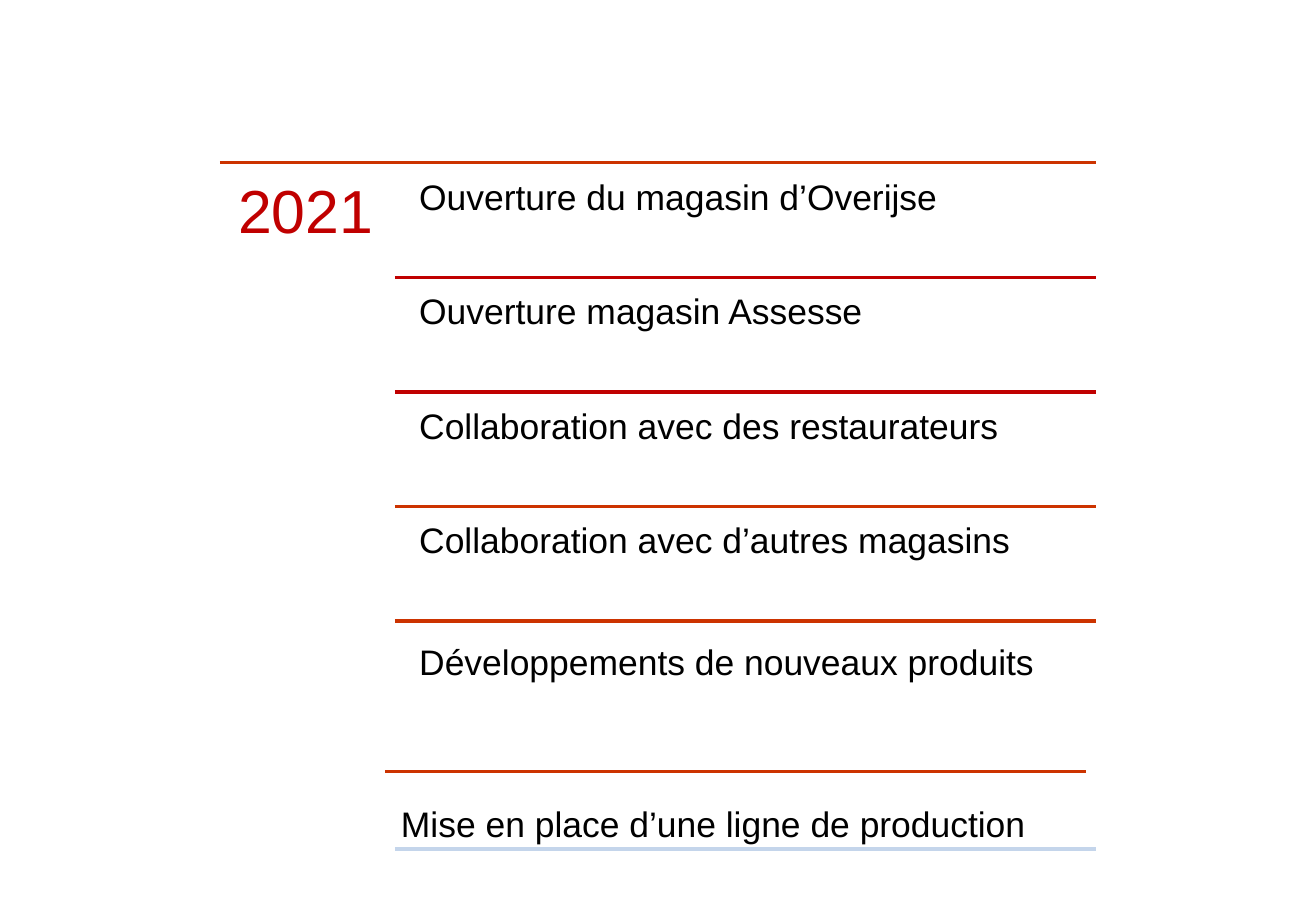
from dataclasses import dataclass

from pptx import Presentation
from pptx.dml.color import RGBColor
from pptx.enum.shapes import MSO_CONNECTOR as Connector
from pptx.enum.text import MSO_ANCHOR as Anchor, MSO_AUTO_SIZE as AutoSize
from pptx.oxml.ns import qn
from pptx.util import Inches, Pt
from lxml.etree import SubElement


@dataclass(frozen=True)
class Theme:
    font: str = "Arial"
    orange: str = "CC3300"
    red: str = "C00000"
    pale_blue: str = "C4D5EB"
    black: str = "000000"
    year_size: int = 36
    item_size: int = 21
    rule_width: int = 2


class TimelineSlide:
    def __init__(self, presentation, theme):
        self.theme = theme
        self.slide = presentation.slides.add_slide(presentation.slide_layouts[6])

    def rule(self, left, top, right, color):
        line = self.slide.shapes.add_connector(
            Connector.STRAIGHT, Inches(left), Inches(top), Inches(right), Inches(top))
        line.line.color.rgb = RGBColor.from_string(color)
        line.line.width = Pt(self.theme.rule_width)
        SubElement(line._element.spPr, qn("a:effectLst"))

    def text(self, content, box, inset, size, color):
        shape = self.slide.shapes.add_textbox(*map(Inches, box))
        frame = shape.text_frame
        frame_format = {
            "word_wrap": True,
            "auto_size": AutoSize.NONE,
            "vertical_anchor": Anchor.TOP,
            **{f"margin_{side}": Inches(inset)
               for side in ("left", "top", "right", "bottom")},
        }
        for name, value in frame_format.items():
            setattr(frame, name, value)
        paragraph = frame.paragraphs[0]
        paragraph.line_spacing = 0.9
        run = paragraph.add_run()
        run.text = content
        for name, value in {"name": self.theme.font, "size": Pt(size)}.items():
            setattr(run.font, name, value)
        run.font.color.rgb = RGBColor.from_string(color)

    def item(self, content, left, top, height=0.9):
        self.text(content, (left, top, 5.67, height), 0.09,
                  self.theme.item_size, self.theme.black)


def main():
    presentation = Presentation()
    presentation.slide_width = Inches(10.83)
    presentation.slide_height = Inches(7.5)
    theme = Theme()
    timeline = TimelineSlide(presentation, theme)

    first_top, row_step = 1.34, 0.943
    rule_left, rule_right, item_left = 3.25, 9.02, 3.36

    timeline.rule(1.81, first_top, rule_right, theme.orange)
    timeline.text("2021", (1.81, first_top, 1.44, 5.69), 0.15,
                  theme.year_size, theme.red)

    rows = [
        ("Ouverture du magasin d’Overijse", theme.red),
        ("Ouverture magasin Assesse", theme.red),
        ("Collaboration avec des restaurateurs", theme.orange),
        ("Collaboration avec d’autres magasins", theme.orange),
    ]
    for index, (content, color) in enumerate(rows):
        row_top = first_top + index * row_step
        timeline.item(content, item_left, row_top + 0.05)
        timeline.rule(rule_left, row_top + row_step, rule_right, color)

    timeline.item("Développements de nouveaux produits", item_left, 5.22)
    timeline.rule(3.17, 6.35, 8.94, theme.orange)
    timeline.item("Mise en place d’une ligne de production", 3.21, 6.55, 0.45)
    timeline.rule(rule_left, 6.99, rule_right, theme.pale_blue)

    presentation.save("out.pptx")


if __name__ == "__main__":
    main()
